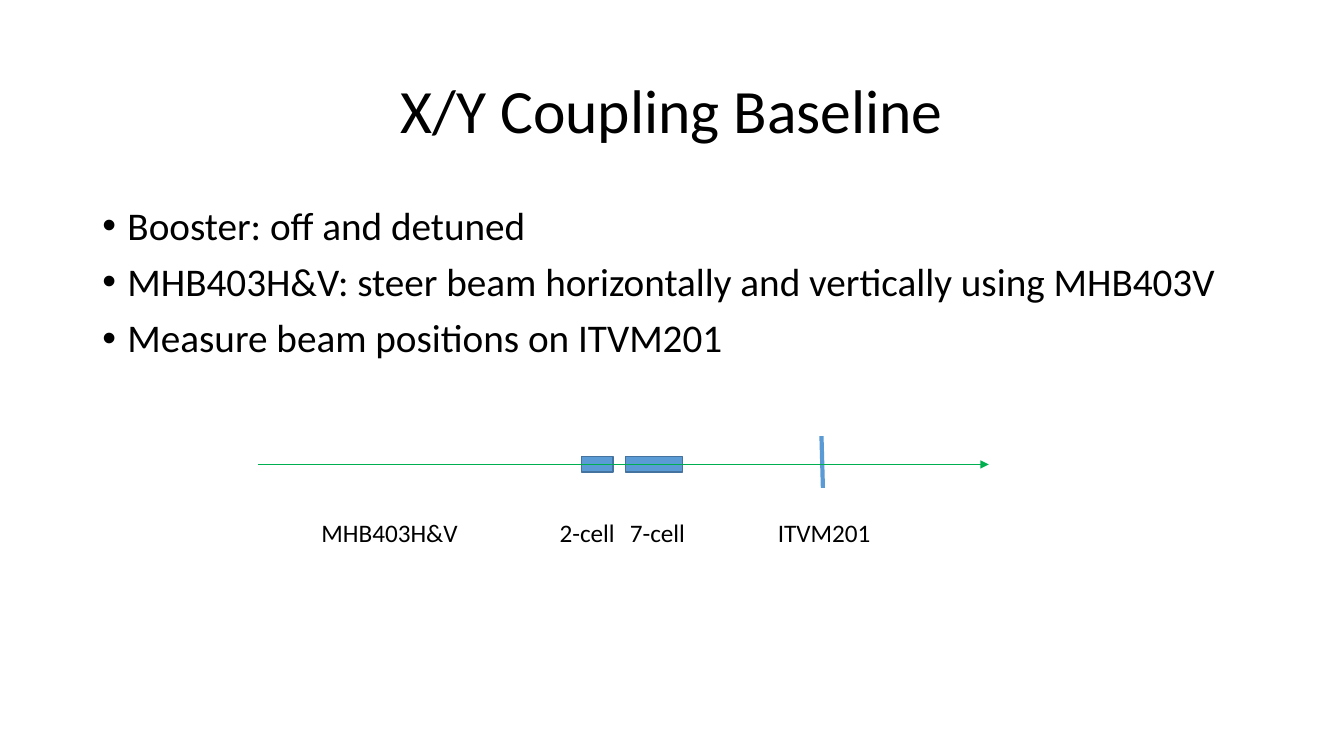
from dataclasses import dataclass
from lxml.etree import SubElement
from pptx import Presentation
from pptx.dml.color import RGBColor
from pptx.enum.shapes import MSO_CONNECTOR, MSO_SHAPE
from pptx.enum.text import MSO_ANCHOR, PP_ALIGN
from pptx.oxml.ns import qn
from pptx.util import Pt


@dataclass(frozen=True)
class Theme:
    face: str = "Calibri"
    ink: str = "000000"
    blue: str = "5B9BD5"
    edge: str = "43739E"
    green: str = "00B050"
    title: int = 44
    body: int = 28
    label: int = 18


THEME = Theme()


def color(code):
    return RGBColor.from_string(code)


def add_bullet(para):
    props = para._p.get_or_add_pPr()
    props.set("marL", str(Pt(18)))
    props.set("indent", str(Pt(-18)))
    SubElement(props, qn("a:buFont"), typeface="Arial")
    SubElement(props, qn("a:buChar"), char="•")


def add_text(slide, text, box, size, align=PP_ALIGN.LEFT, anchor=MSO_ANCHOR.TOP,
             wrap=True, bullet=False, line=None, gap=0):
    frame = slide.shapes.add_textbox(*map(Pt, box)).text_frame
    frame.word_wrap = wrap
    frame.vertical_anchor = anchor
    frame.text = text
    for i, para in enumerate(frame.paragraphs):
        if bullet:
            add_bullet(para)
        para.alignment = align
        if line:
            para.line_spacing = line
        if i:
            para.space_before = Pt(gap)
        para.font.name = THEME.face
        para.font.size = Pt(size)
        para.font.color.rgb = color(THEME.ink)


def add_cell(slide, left, top, width, height):
    cell = slide.shapes.add_shape(MSO_SHAPE.RECTANGLE, *map(Pt, (left, top, width, height)))
    cell.shadow.inherit = False
    cell.fill.solid()
    cell.fill.fore_color.rgb = color(THEME.blue)
    cell.line.color.rgb = color(THEME.edge)
    cell.line.width = Pt(1)


def add_line(slide, start, end, shade, width, arrow=False):
    line = slide.shapes.add_connector(MSO_CONNECTOR.STRAIGHT, *map(Pt, start + end))
    line.line.color.rgb = color(shade)
    line.line.width = Pt(width)
    if arrow:
        SubElement(line.line._get_or_add_ln(), qn("a:tailEnd"), type="triangle")
    SubElement(line._element.spPr, qn("a:effectLst"))


def main():
    deck = Presentation()
    deck.slide_width, deck.slide_height = Pt(960), Pt(540)
    slide = deck.slides.add_slide(deck.slide_layouts[6])

    add_text(slide, "X/Y Coupling Baseline", (66, 28.75, 828, 104.38), THEME.title,
             align=PP_ALIGN.CENTER, anchor=MSO_ANCHOR.MIDDLE, line=0.9)
    points = [
        "Booster: off and detuned",
        "MHB403H&V: steer beam horizontally and vertically using MHB403V",
        "Measure beam positions on ITVM201",
    ]
    add_text(slide, "\n".join(points), (66, 143.75, 828, 342.63), THEME.body,
             bullet=True, line=0.9, gap=10)

    beam = 331.75
    for left, width in ((415.3, 22.5), (447, 40.5)):
        add_cell(slide, left, beam - 5.5, width, 11)
    add_line(slide, (586.8, 311.5), (587.8, 348.5), THEME.blue, 3)
    add_line(slide, (184.3, beam), (706.3, beam), THEME.green, 0.5, arrow=True)

    labels = (("ITVM201", 548.5, 81.5), ("7-cell", 442.8, 54.5),
              ("2-cell", 392.6, 54.5), ("MHB403H&V", 222.5, 113))
    for name, left, width in labels:
        add_text(slide, name, (left, 366, width, 29), THEME.label, wrap=False)

    deck.save("out.pptx")


if __name__ == "__main__":
    main()
